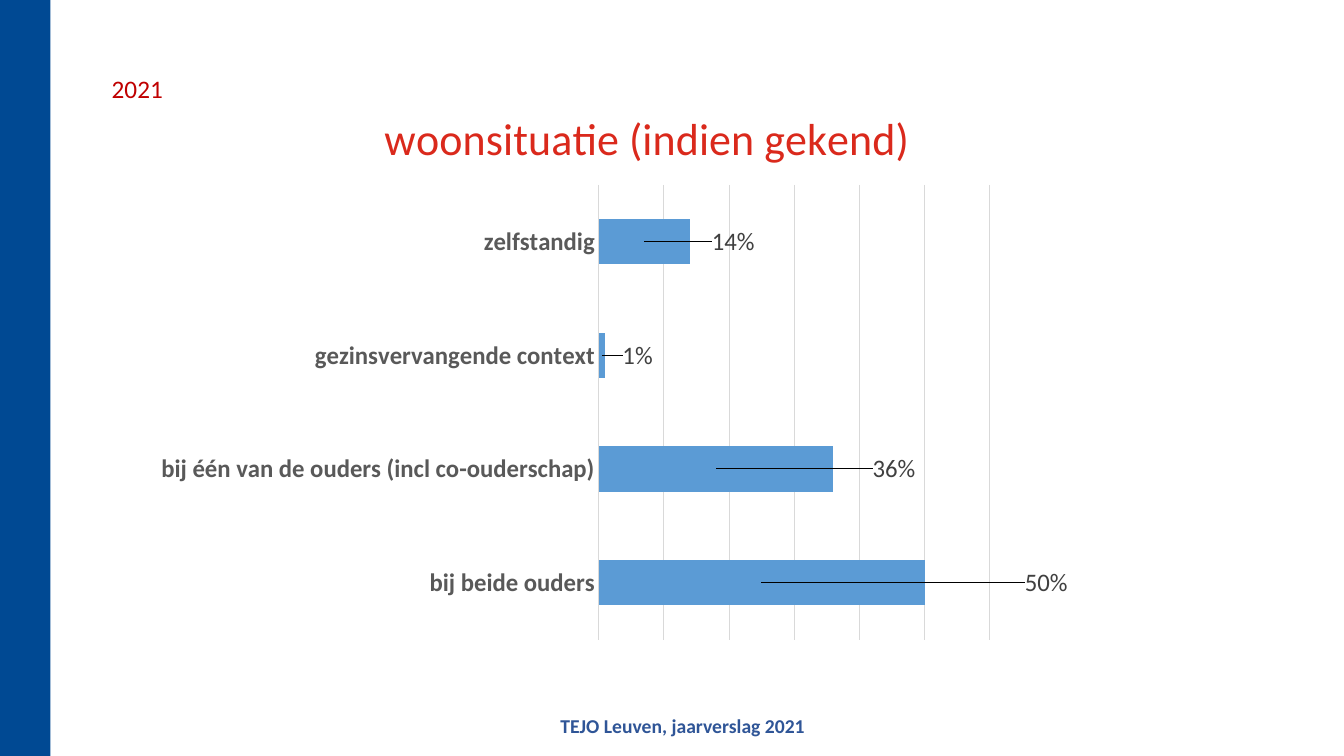
from lxml.etree import SubElement
from pptx import Presentation
from pptx.chart.data import CategoryChartData
from pptx.dml.color import RGBColor
from pptx.enum.chart import XL_CHART_TYPE, XL_LABEL_POSITION, XL_TICK_MARK
from pptx.enum.shapes import MSO_SHAPE
from pptx.enum.text import MSO_AUTO_SIZE
from pptx.oxml.ns import qn
from pptx.util import Inches, Pt

TITLE = "woonsituatie (indien gekend)"
YEAR = "2021"
FOOTER = "TEJO Leuven, jaarverslag 2021"
HOUSING = [
    ("bij beide ouders", 0.5, 0.32),
    ("bij één van de ouders (incl co-ouderschap)", 0.36, 0.2),
    ("gezinsvervangende context", 0.01, 0.04),
    ("zelfstandig", 0.14, 0.1),
]
PLOT_AREA = {"x": 0.48, "y": 0.19, "w": 0.44, "h": 0.79}
TITLE_SPOT = {"x": 0.23, "y": 0.04}
THEME = {
    "font": "Calibri",
    "sidebar": "004993", "footer": "2F5597", "year": "C00000",
    "title": "DA291C", "bar": "5B9BD5", "grid": "D9D9D9",
    "category": "595959", "label": "404040",
    "title_size": 32, "text_size": 18, "footer_size": 14, "base_size": 10,
}


def color(name):
    return RGBColor.from_string(THEME[name])


def style_font(font, size, color_name, bold=False):
    font.name = THEME["font"]
    font.size = Pt(THEME[size])
    font.bold = bold
    font.color.rgb = color(color_name)


def style_line(line):
    line.color.rgb = color("grid")
    line.width = Pt(0.75)


def add_text(slide, area, text, size, color_name, bold=False):
    box = slide.shapes.add_textbox(*map(Inches, area))
    frame = box.text_frame
    frame.word_wrap = False
    frame.auto_size = MSO_AUTO_SIZE.SHAPE_TO_FIT_TEXT
    span = frame.paragraphs[0].add_run()
    span.text = text
    style_font(span.font, size, color_name, bold)


def place(element, spot, after=None, inner=False):
    for old in element.findall(qn("c:layout")):
        element.remove(old)
    layout = SubElement(element, qn("c:layout"))
    manual = SubElement(layout, qn("c:manualLayout"))
    if inner:
        SubElement(manual, qn("c:layoutTarget")).set("val", "inner")
    if after != "c:idx":
        for key in ("xMode", "yMode"):
            SubElement(manual, qn(f"c:{key}")).set("val", "edge")
    for key, value in spot.items():
        SubElement(manual, qn(f"c:{key}")).set("val", str(value))
    if after:
        element.find(qn(after)).addnext(layout)
    else:
        element.insert(0, layout)


def add_housing_chart(slide):
    data = CategoryChartData(number_format="0%")
    data.categories = [name for name, share, shift in HOUSING]
    data.add_series("Series 1", [share for name, share, shift in HOUSING])
    area = map(Inches, (1.6, 0.75, 8.99, 5.71))
    chart = slide.shapes.add_chart(XL_CHART_TYPE.BAR_STACKED, *area, data).chart
    chart.font.name = THEME["font"]
    chart.font.size = Pt(THEME["base_size"])
    chart.has_legend = False

    span = chart.chart_title.text_frame.paragraphs[0].add_run()
    span.text = TITLE
    style_font(span.font, "title_size", "title")
    chart_root = chart.element.find(qn("c:chart"))
    place(chart_root.find(qn("c:title")), TITLE_SPOT, after="c:tx")
    place(chart_root.find(qn("c:plotArea")), PLOT_AREA, inner=True)

    names = chart.category_axis
    names.major_tick_mark = names.minor_tick_mark = XL_TICK_MARK.NONE
    names.has_major_gridlines = False
    style_font(names.tick_labels.font, "text_size", "category", True)
    style_line(names.format.line)

    shares = chart.value_axis
    shares.minimum_scale, shares.maximum_scale, shares.major_unit = 0, 0.6, 0.1
    shares.has_major_gridlines = True
    style_line(shares.major_gridlines.format.line)
    shares.tick_labels.number_format = "0%"
    shares.tick_labels.number_format_is_linked = False
    shares.visible = False

    plot = chart.plots[0]
    plot.gap_width, plot.overlap = 150, 100
    plot.vary_by_categories = False
    bars = plot.series[0]
    bars.format.fill.solid()
    bars.format.fill.fore_color.rgb = color("bar")
    labels = bars.data_labels
    labels.show_value = True
    labels.number_format = "0%"
    labels.number_format_is_linked = False
    labels.position = XL_LABEL_POSITION.CENTER
    style_font(labels.font, "text_size", "label")
    for index in range(len(HOUSING)):
        label = bars.points[index].data_label
        label.position = XL_LABEL_POSITION.CENTER
        style_font(label.font, "text_size", "label")
    for element, (name, share, shift) in zip(chart_root.iter(qn("c:dLbl")), HOUSING):
        place(element, {"x": shift, "y": 0}, after="c:idx")


def main():
    deck = Presentation()
    deck.slide_width, deck.slide_height = Inches(13.33), Inches(7.5)
    slide = deck.slides.add_slide(deck.slide_layouts[6])
    sidebar = slide.shapes.add_shape(MSO_SHAPE.RECTANGLE, 0, 0, Inches(0.5), deck.slide_height)
    sidebar.shadow.inherit = False
    sidebar.fill.solid()
    sidebar.fill.fore_color.rgb = color("sidebar")
    sidebar.line.fill.background()
    add_text(slide, (5.46, 7.03, 2.67, 0.34), FOOTER, "footer_size", "footer", True)
    add_housing_chart(slide)
    add_text(slide, (1.01, 0.68, 0.78, 0.4), YEAR, "text_size", "year")
    deck.save("out.pptx")


if __name__ == "__main__":
    main()
